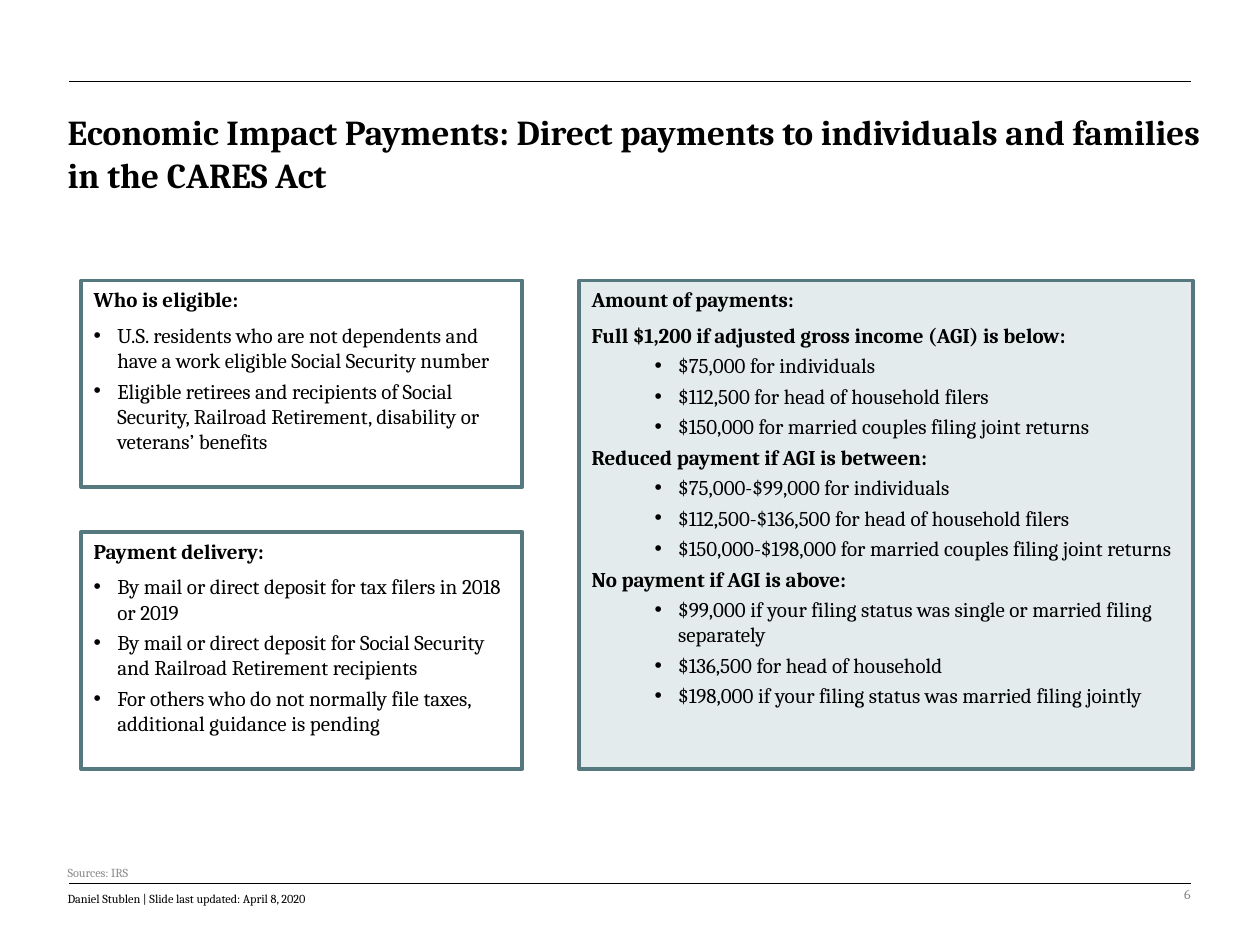
import pptx
import pptx.dml.color
import pptx.enum.shapes
import pptx.enum.text
import pptx.oxml
import pptx.oxml.ns
import pptx.util

Pt = pptx.util.Pt
ANCHOR = pptx.enum.text.MSO_ANCHOR
ALIGN = pptx.enum.text.PP_ALIGN


def rgb(value):
    return pptx.dml.color.RGBColor.from_string(value)


class SlideBuilder:
    FONT = "Cambria"
    BLACK, TEAL, PALE = "000000", "55797E", "E4EBED"
    BODY, HANG = 12, 13.5

    def __init__(self, s):
        self.s = s

    def place(self, sp, x, y, w, h):
        sp.left, sp.top, sp.width, sp.height = Pt(x), Pt(y), Pt(w), Pt(h)

    def frame(self, sp, anchor=ANCHOR.TOP):
        tf = sp.text_frame
        tf.word_wrap = True
        tf.auto_size = pptx.enum.text.MSO_AUTO_SIZE.NONE
        tf.vertical_anchor = anchor
        return tf

    def style(self, p, size, color=BLACK, bold=False, align=ALIGN.LEFT, after=0):
        p.alignment = align
        p.space_after = Pt(after)
        for r in p.runs:
            r.font.name = self.FONT
            r.font.size = Pt(size)
            r.font.bold = bold
            r.font.color.rgb = rgb(color)

    def bullet(self, p, indent):
        pPr = p._p.get_or_add_pPr()
        pPr.set("marL", str(Pt(indent)))
        pPr.set("indent", str(-Pt(self.HANG)))
        for tag, key, value in (("buFont", "typeface", "Arial"), ("buChar", "char", "•")):
            el = pptx.oxml.parse_xml(f"<a:{tag} {pptx.oxml.ns.nsdecls('a')}/>")
            el.set(key, value)
            pPr.append(el)

    def title(self, text, x, y, w, h):
        sp = self.s.shapes.title
        self.place(sp, x, y, w, h)
        tf = self.frame(sp)
        tf.text = text
        self.style(tf.paragraphs[0], 20, bold=True, after=3)

    def rule(self, x1, x2, y):
        line = self.s.shapes.add_connector(
            pptx.enum.shapes.MSO_CONNECTOR.STRAIGHT, Pt(x1), Pt(y), Pt(x2), Pt(y))
        line.line.color.rgb = rgb(self.BLACK)
        line.line.width = Pt(0.5)
        line._element.spPr.append(
            pptx.oxml.parse_xml(f"<a:effectLst {pptx.oxml.ns.nsdecls('a')}/>"))

    def label(self, text, x, y, w, h, size, color, align=ALIGN.LEFT, anchor=ANCHOR.TOP):
        sp = self.s.shapes.add_textbox(Pt(x), Pt(y), Pt(w), Pt(h))
        tf = self.frame(sp, anchor)
        tf.text = text
        self.style(tf.paragraphs[0], size, color, align=align)

    def panel(self, heading, groups, x, y, w, h, fill=None):
        """Each group is (subheading or None, bullet texts)."""
        sp = self.s.shapes.add_shape(
            pptx.enum.shapes.MSO_SHAPE.RECTANGLE, Pt(x), Pt(y), Pt(w), Pt(h))
        sp.shadow.inherit = False
        if fill:
            sp.fill.solid()
            sp.fill.fore_color.rgb = rgb(fill)
        else:
            sp.fill.background()
        sp.line.color.rgb = rgb(self.TEAL)
        sp.line.width = Pt(2.25)
        tf = self.frame(sp)
        tf.text = heading
        self.style(tf.paragraphs[0], self.BODY, bold=True, after=6)
        for subheading, items in groups:
            if subheading:
                p = tf.add_paragraph()
                p.text = subheading
                self.style(p, self.BODY, bold=True, after=3)
            for item in items:
                p = tf.add_paragraph()
                p.text = item
                p.level = 1 if subheading else 0
                self.bullet(p, 49.5 if subheading else self.HANG)
                self.style(p, self.BODY, after=3)


def main():
    prs = pptx.Presentation()
    prs.slide_width, prs.slide_height = Pt(720), Pt(540)
    b = SlideBuilder(prs.slides.add_slide(prs.slide_layouts[5]))

    # Rules and title
    for y in (46.3, 504.7):
        b.rule(39.6, 680.4, y)
    b.title("Economic Impact Payments: Direct payments to individuals and families "
            "in the CARES Act", 31.5, 59.8, 662.5, 50.4)

    # Left panels
    left, top, width, bottom = 46.5, 160.3, 252, 439.5
    delivery_top = 304
    b.panel("Who is eligible:", [(None, [
        "U.S. residents who are not dependents and have a work eligible Social Security number",
        "Eligible retirees and recipients of Social Security, Railroad Retirement, "
        "disability or veterans’ benefits",
    ])], left, top, width, 118)
    b.panel("Payment delivery:", [(None, [
        "By mail or direct deposit for tax filers in 2018 or 2019",
        "By mail or direct deposit for Social Security and Railroad Retirement recipients",
        "For others who do not normally file taxes, additional guidance is pending",
    ])], left, delivery_top, width, bottom - delivery_top)

    # Payment amounts
    b.panel("Amount of payments:", [
        ("Full $1,200 if adjusted gross income (AGI) is below:", [
            "$75,000 for individuals",
            "$112,500 for head of household filers",
            "$150,000 for married couples filing joint returns",
        ]),
        ("Reduced payment if AGI is between:", [
            "$75,000-$99,000 for individuals",
            "$112,500-$136,500 for head of household filers",
            "$150,000-$198,000 for married couples filing joint returns",
        ]),
        ("No payment if AGI is above:", [
            "$99,000 if your filing status was single or married filing separately",
            "$136,500 for head of household",
            "$198,000 if your filing status was married filing jointly",
        ]),
    ], 331, top, 350.6, bottom - top, b.PALE)

    # Footer
    b.label("Sources: IRS", 31.5, 491, 649.5, 15, 7, "888888")
    b.label("Daniel Stublen | Slide last updated: April 8, 2020",
            31.5, 505.7, 281.5, 15.8, 7, b.BLACK)
    b.label("6", 508.5, 496.3, 179, 28.8, 8, "8C8C8C", ALIGN.RIGHT, ANCHOR.MIDDLE)

    prs.save("out.pptx")


if __name__ == "__main__":
    main()
